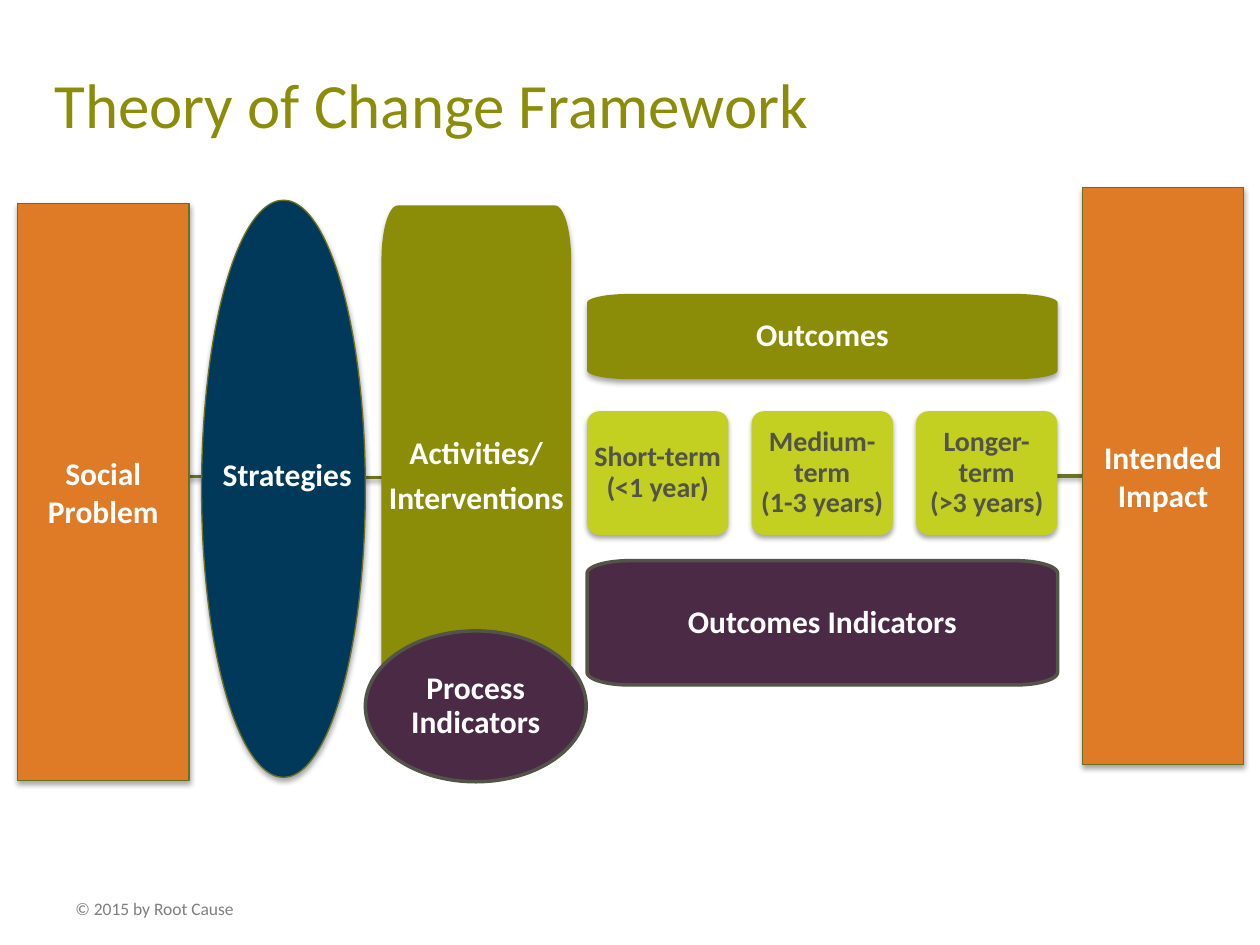
from math import cos, radians, sin

from lxml.etree import SubElement
from pptx import Presentation
from pptx.dml.color import RGBColor
from pptx.enum.shapes import MSO_CONNECTOR, MSO_SHAPE
from pptx.enum.text import MSO_ANCHOR, PP_ALIGN
from pptx.oxml.ns import qn
from pptx.util import Pt

theme = {
    "font": "Calibri",
    "title_size": 36, "label_size": 18, "term_size": 16, "footer_size": 10,
    "olive": "8B8D09", "lime": "C3CF21", "orange": "DF7A26", "navy": "00395A",
    "plum": "4B2A46", "slate": "535349", "white": "FFFFFF", "gray": "7F7F7F",
    "border": "6B7021", "link": "6C7124", "shadow": "000000",
}


def set_shadow(element, opacity, distance):
    effects = SubElement(element.spPr, qn("a:effectLst"))
    if opacity:
        shadow = SubElement(effects, qn("a:outerShdw"), blurRad=str(Pt(3.1)),
                            dist=str(Pt(distance)), dir="5400000", rotWithShape="0")
        color = SubElement(shadow, qn("a:srgbClr"), val=theme["shadow"])
        SubElement(color, qn("a:alpha"), val=str(opacity * 1000))


def write_text(shape, text, size, color, bold, frame_format, paragraph_format):
    frame = shape.text_frame
    frame.text = text
    for name, value in frame_format.items():
        setattr(frame, name, value)
    for paragraph in frame.paragraphs:
        for name, value in paragraph_format.items():
            setattr(paragraph, name, value)
        font_format = {"name": theme["font"], "size": Pt(theme[size]), "bold": bold}
        for name, value in font_format.items():
            setattr(paragraph.font, name, value)
        paragraph.font.color.rgb = RGBColor.from_string(theme[color])


presentation = Presentation()
presentation.slide_width, presentation.slide_height = Pt(720), Pt(540)
slide = presentation.slides.add_slide(presentation.slide_layouts[6])
shapes = slide.shapes

connectors = []
for left, right, middle in [(187.2, 241.2, 272.9), (108, 162, 272.2), (564.5, 618.5, 272)]:
    connector = shapes.add_connector(
        MSO_CONNECTOR.STRAIGHT, Pt(left), Pt(middle), Pt(right), Pt(middle))
    connector.line.width = Pt(2)
    connector.line.color.rgb = RGBColor.from_string(theme["link"])
    set_shadow(connector._element, 38, 1.6)
    connectors.append(connector)

centered = {"alignment": PP_ALIGN.CENTER}
compact = {**centered, "line_spacing": 0.9, "space_after": Pt(6.3)}
wrapped = {"word_wrap": True, "vertical_anchor": MSO_ANCHOR.MIDDLE}
margins = ("margin_left", "margin_top", "margin_right", "margin_bottom")
narrow = {**wrapped, **{margin: Pt(3.6) for margin in margins}}
tight = {**wrapped, **{margin: Pt(1) for margin in margins}}

panels = [
    ("Outcomes", (335.5, 168, 268.8, 48.7), (24, 5), "olive", None),
    ("Activities/\nInterventions", (218, 117.4, 108.4, 310.3), (9.3, 31), "olive", None),
    ("Outcomes Indicators", (335.5, 320.4, 268.8, 71), (24, 7.2), "plum", "slate"),
]
for text, (left, top, width, height), (radius_x, radius_y), fill, border in panels:
    corners = [
        (left + width - radius_x, top + height - radius_y),
        (left + radius_x, top + height - radius_y),
        (left + radius_x, top + radius_y),
        (left + width - radius_x, top + radius_y),
    ]
    points = [
        (Pt(x + radius_x * cos(radians(90 * quarter + step))),
         Pt(y + radius_y * sin(radians(90 * quarter + step))))
        for quarter, (x, y) in enumerate(corners)
        for step in range(0, 91, 6)
    ]
    builder = shapes.build_freeform(*points[0])
    builder.add_line_segments(points[1:], close=True)
    panel = builder.convert_to_shape()
    panel.fill.solid()
    panel.fill.fore_color.rgb = RGBColor.from_string(theme[fill])
    if border:
        panel.line.width = Pt(2)
        panel.line.color.rgb = RGBColor.from_string(theme[border])
    else:
        panel.line.fill.background()
    set_shadow(panel._element, 0 if border else 35, 1.8)
    write_text(panel, text, "label_size", "white", True, narrow, compact)

column = (MSO_SHAPE.RECTANGLE, "orange", "border", 0.75, "label_size", "white", wrapped, centered)
term = (MSO_SHAPE.ROUNDED_RECTANGLE, "lime", None, 0, "term_size", "slate", tight, compact)
process = (MSO_SHAPE.OVAL, "plum", "slate", 2, "label_size", "white", wrapped, compact)
strategy = (MSO_SHAPE.OVAL, "navy", "border", 0.75, "label_size", "white", wrapped, centered)
term_texts = ["Short-term\v(<1 year)", "Medium-term\v(1-3 years)", "Longer-term\v(>3 years)"]
blocks = [
    ("Social Problem", (10, 116.4, 98, 329.8), column),
    ("Intended Impact", (618.5, 107.1, 92.3, 329.8), column),
    *[(text, (335.5 + 94 * index, 235, 80.8, 70.7), term)
      for index, text in enumerate(term_texts)],
    ("Process Indicators", (208.8, 360.5, 126.2, 86.2), process),
    ("", (115.2, 114.4, 93.6, 329.8), strategy),
]
for text, box, style in blocks:
    kind, fill, border, weight, size, color, frame_format, paragraph_format = style
    block = shapes.add_shape(kind, *map(Pt, box))
    if kind == MSO_SHAPE.ROUNDED_RECTANGLE:
        block.adjustments[0] = 0.1
    block.fill.solid()
    block.fill.fore_color.rgb = RGBColor.from_string(theme[fill])
    if border:
        block.line.width = Pt(weight)
        block.line.color.rgb = RGBColor.from_string(theme[border])
    else:
        block.line.fill.background()
    set_shadow(block._element, 0 if weight == 2 else 35, 1.8)
    if text:
        write_text(block, text, size, color, True, frame_format, paragraph_format)
    if text == "Intended Impact":
        connectors[2].end_connect(block, 1)

labels = [
    ("Theory of Change Framework", (24, 34, 672, 60), "title_size", "olive", False),
    ("Strategies", (120.2, 256.3, 98.6, 29), "label_size", "white", True),
    ("© 2015 by Root Cause", (36, 509.8, 120.2, 19.4), "footer_size", "gray", False),
]
for text, box, size, color, bold in labels:
    label = shapes.add_textbox(*map(Pt, box))
    write_text(label, text, size, color, bold, {"word_wrap": True}, {})

presentation.save("out.pptx")
